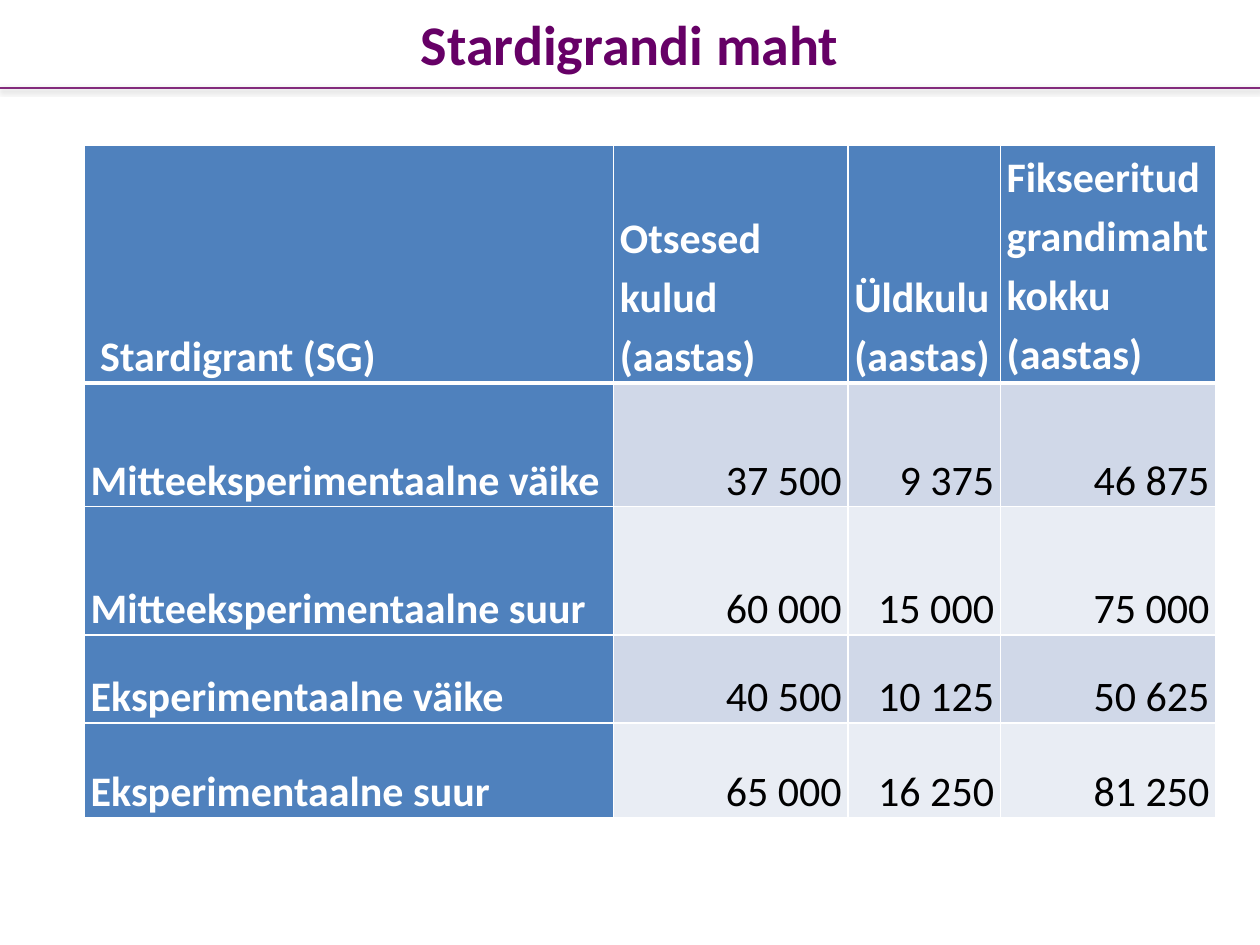
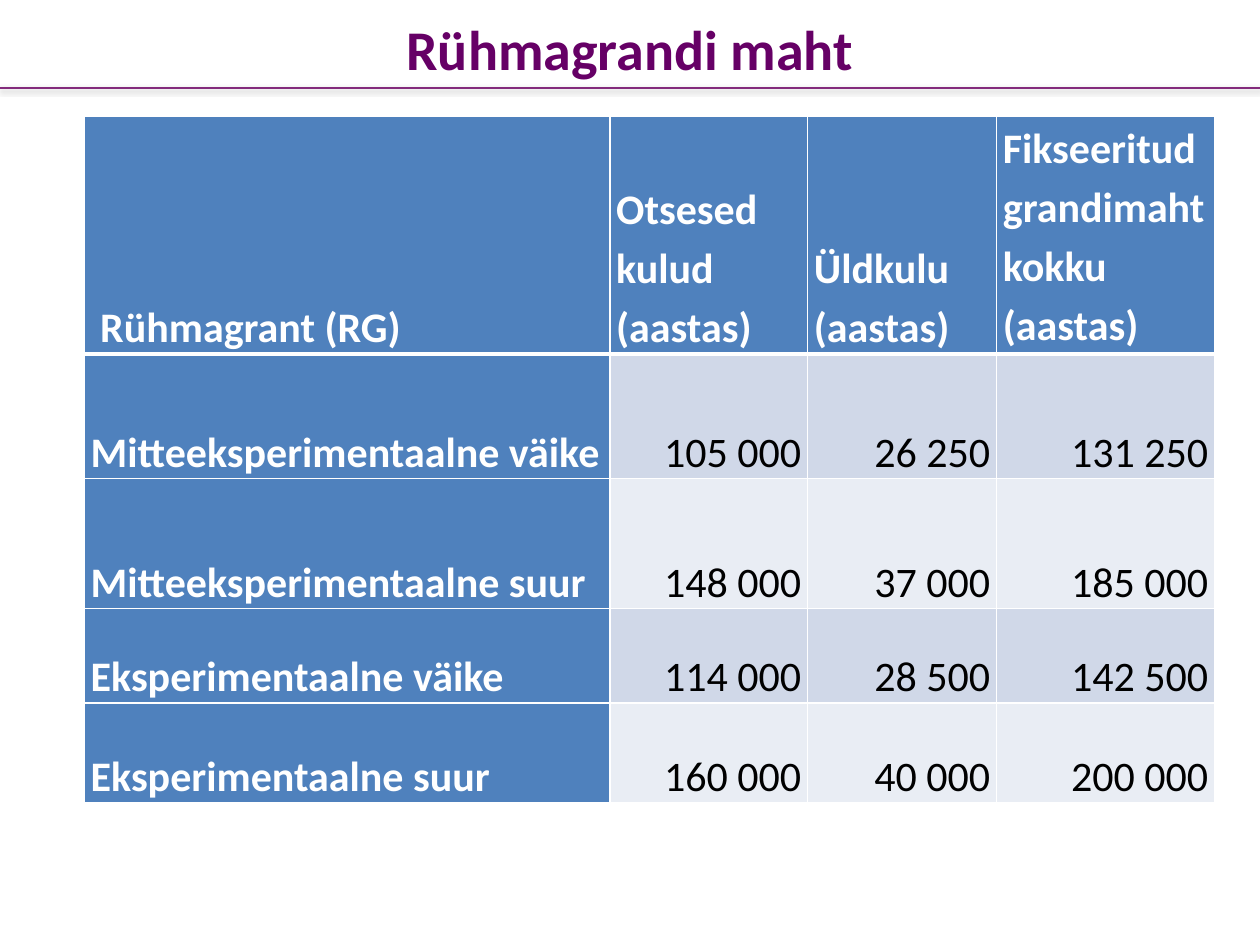
from lxml import etree
from pptx import Presentation
from pptx.dml.color import RGBColor
from pptx.enum.shapes import MSO_CONNECTOR
from pptx.enum.text import MSO_ANCHOR, PP_ALIGN
from pptx.oxml import parse_xml
from pptx.oxml.ns import nsdecls, qn
from pptx.util import Inches, Pt

STRAIGHT = MSO_CONNECTOR.STRAIGHT
TOP, MIDDLE, BOTTOM = MSO_ANCHOR.TOP, MSO_ANCHOR.MIDDLE, MSO_ANCHOR.BOTTOM
CENTER, RIGHT, JUSTIFY = PP_ALIGN.CENTER, PP_ALIGN.RIGHT, PP_ALIGN.JUSTIFY

PURPLE = RGBColor(0x66, 0x00, 0x66)
RULE_PURPLE = RGBColor(0x83, 0x2B, 0x7C)
HEADER_BLUE = RGBColor(0x4F, 0x81, 0xBD)
BANDS = [RGBColor(0xD0, 0xD8, 0xE8), RGBColor(0xE9, 0xED, 0xF4)]
WHITE = RGBColor(0xFF, 0xFF, 0xFF)
BLACK = RGBColor(0x00, 0x00, 0x00)
FONT = "Calibri"

RULE_SHADOW = (
    f'<a:effectLst {nsdecls("a")}>'
    f'<a:outerShdw blurRad="{Pt(3.1)}" dist="{Pt(1)}" dir="5400000" rotWithShape="0">'
    '<a:srgbClr val="000000"><a:alpha val="25000"/></a:srgbClr>'
    '</a:outerShdw></a:effectLst>'
)

GRANT_TYPES = [
    "Mitteeksperimentaalne väike",
    "Mitteeksperimentaalne suur",
    "Eksperimentaalne väike",
    "Eksperimentaalne suur",
]
DIRECT_COSTS = "Otsesed kulud (aastas)"
FIXED_TOTAL = "Fikseeritud grandimaht kokku (aastas)"

GRANTS = [
    {
        "title": "Stardigrandi maht",
        "title_height": 0.68,
        "top": 1.15,
        "widths": [4.2, 1.86, 1.21, 1.71],
        "heights": [1.89, 0.98, 1.02, 0.7, 0.75],
        "headings": [" Stardigrant (SG)", DIRECT_COSTS, "Üldkulu\n(aastas)", FIXED_TOTAL],
        "amounts": [
            (37500, 9375, 46875),
            (60000, 15000, 75000),
            (40500, 10125, 50625),
            (65000, 16250, 81250),
        ],
    },
    {
        "title": "Rühmagrandi maht",
        "title_height": 0.76,
        "top": 0.92,
        "widths": [4.17, 1.57, 1.5, 1.73],
        "heights": [1.89, 0.99, 1.03, 0.75, 0.79],
        "headings": [" Rühmagrant (RG)", DIRECT_COSTS, "Üldkulu (aastas)", FIXED_TOTAL],
        "amounts": [
            (105000, 26250, 131250),
            (148000, 37000, 185000),
            (114000, 28500, 142500),
            (160000, 40000, 200000),
        ],
    },
]


def style_paragraph(paragraph, size, color, bold, alignment):
    paragraph.alignment = alignment
    paragraph.font.name = FONT
    paragraph.font.size = Pt(size)
    paragraph.font.bold = bold
    paragraph.font.color.rgb = color


def add_borders(cell, top_width, bottom_width):
    properties = cell._tc.get_or_add_tcPr()
    edges = [("lnL", 1), ("lnR", 1), ("lnT", top_width), ("lnB", bottom_width)]
    for position, (edge, width) in enumerate(edges):
        border = etree.Element(qn(f"a:{edge}"), w=str(Pt(width)))
        fill = etree.SubElement(border, qn("a:solidFill"))
        etree.SubElement(fill, qn("a:srgbClr"), val=str(WHITE))
        properties.insert(position, border)


prs = Presentation()
prs.slide_width = Inches(10)
prs.slide_height = Inches(7.5)

for grant in GRANTS:
    slide = prs.slides.add_slide(prs.slide_layouts[6])

    rule = slide.shapes.add_connector(STRAIGHT, Inches(0), Inches(0.7), Inches(10), Inches(0.7))
    rule.line.color.rgb = RULE_PURPLE
    rule.line.width = Pt(1)
    rule._element.spPr.append(parse_xml(RULE_SHADOW))

    title = slide.shapes.add_textbox(
        Inches(0.5), Inches(0), Inches(9), Inches(grant["title_height"])
    ).text_frame
    title.word_wrap = True
    title.vertical_anchor = MIDDLE
    title.text = grant["title"]
    style_paragraph(title.paragraphs[0], 32, PURPLE, True, CENTER)

    rows = [grant["headings"]]
    for grant_type, amounts in zip(GRANT_TYPES, grant["amounts"]):
        rows.append([grant_type] + [f"{amount:,}".replace(",", " ") for amount in amounts])

    volumes = slide.shapes.add_table(
        len(rows), len(grant["widths"]), Inches(0.67), Inches(grant["top"]),
        Inches(sum(grant["widths"])), Inches(sum(grant["heights"])),
    ).table
    for column, width in zip(volumes.columns, grant["widths"]):
        column.width = Inches(width)
    for row, height in zip(volumes.rows, grant["heights"]):
        row.height = Inches(height)

    for r, texts in enumerate(rows):
        for c, text in enumerate(texts):
            cell = volumes.cell(r, c)
            is_heading = r == 0 or c == 0
            cell.text = text
            cell.margin_left = cell.margin_right = Inches(0.05)
            cell.margin_top = cell.margin_bottom = Inches(0)
            cell.vertical_anchor = TOP if r == 0 and c == 3 else BOTTOM
            cell.fill.solid()
            cell.fill.fore_color.rgb = HEADER_BLUE if is_heading else BANDS[(r - 1) % 2]
            add_borders(cell, 3 if r == 1 else 1, 3 if r == 0 else 1)
            for paragraph in cell.text_frame.paragraphs:
                paragraph.line_spacing = 1.15
                style_paragraph(
                    paragraph, 24, WHITE if is_heading else BLACK,
                    is_heading, JUSTIFY if is_heading else RIGHT,
                )

prs.save("out.pptx")
